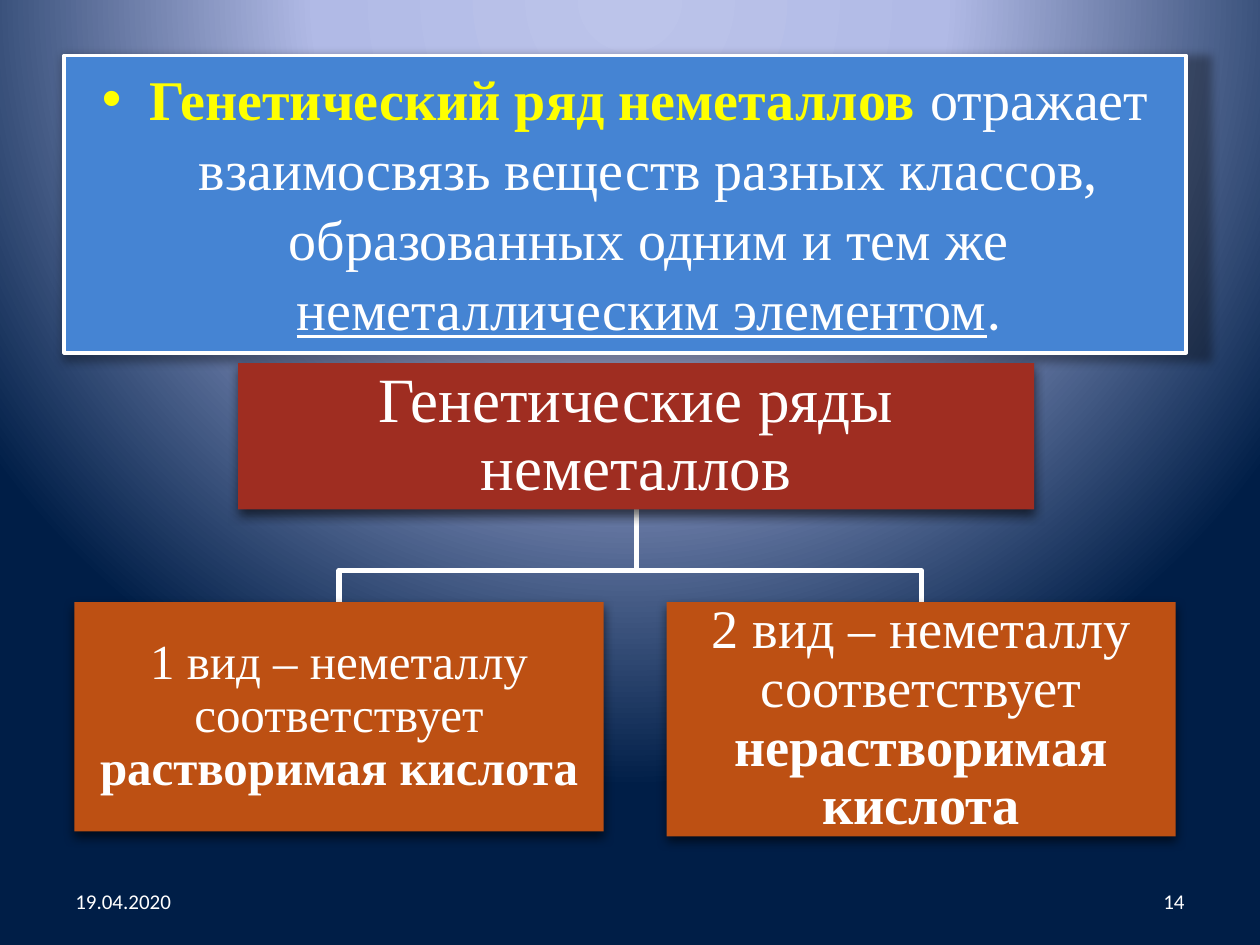
"""Builds a slide with a definition and a two-branch tree of non-metal genetic series."""
from dataclasses import dataclass

from lxml import etree
from pptx import Presentation
from pptx.dml.color import RGBColor
from pptx.enum.shapes import MSO_SHAPE
from pptx.enum.text import MSO_ANCHOR, PP_ALIGN
from pptx.oxml import parse_xml
from pptx.oxml.ns import qn
from pptx.util import Cm, Pt

RECTANGLE = MSO_SHAPE.RECTANGLE
TOP, MIDDLE = MSO_ANCHOR.TOP, MSO_ANCHOR.MIDDLE
LEFT, CENTER, RIGHT = PP_ALIGN.LEFT, PP_ALIGN.CENTER, PP_ALIGN.RIGHT
SERIF, SANS = "Times New Roman", "Calibri"
WHITE, YELLOW, BLUE, RED, ORANGE = "FFFFFF", "FFFF00", "4584D3", "9F2D21", "BD5013"
BACKGROUND_STOPS = [(0, "BCC4EA"), (40, "B1BAE6"), (100, "001E47")]
BEND_HEIGHT = 11.5


@dataclass
class Shadow:
    alpha: int
    blur: float
    distance: float
    scale: int = 100


@dataclass
class Span:
    text: str
    color: str = WHITE
    bold: bool = False
    underline: bool = False
    font: str = SERIF


@dataclass
class Node:
    left: float
    top: float
    width: float
    height: float
    fill: str
    size: float
    spans: list[Span]
    inset: float = 0.05

    @property
    def center(self) -> float:
        return self.left + self.width / 2


DEFINITION = [
    Span("Генетический ряд неметаллов ", YELLOW, bold=True),
    Span("отражает взаимосвязь веществ разных классов, образованных одним и тем же "),
    Span("неметаллическим элементом", underline=True),
    Span(".", font=SANS),
]
ROOT = Node(4.8, 7.32, 16.05, 2.95, RED, 36, [Span("Генетические ряды неметаллов")], 0.08)
BRANCHES = [
    Node(1.5, 12.14, 10.67, 4.62, ORANGE, 28,
         [Span("1 вид – неметаллу соответствует "), Span("растворимая кислота", bold=True)]),
    Node(13.44, 12.14, 10.26, 4.72, ORANGE, 31,
         [Span("2 вид – неметаллу соответствует "), Span("нерастворимая кислота", bold=True)]),
]
NODE_SHADOW = Shadow(60, 6, 3)


def rgb(color: str) -> RGBColor:
    return RGBColor.from_string(color)


def paint_background(page) -> None:
    stops = "".join(
        f'<a:gs pos="{place * 1000}"><a:srgbClr val="{color}"/></a:gs>'
        for place, color in BACKGROUND_STOPS
    )
    background = parse_xml(
        '<p:bg xmlns:p="http://schemas.openxmlformats.org/presentationml/2006/main"'
        ' xmlns:a="http://schemas.openxmlformats.org/drawingml/2006/main">'
        f'<p:bgPr><a:gradFill rotWithShape="1"><a:gsLst>{stops}</a:gsLst>'
        '<a:path path="circle"><a:fillToRect l="50000" t="-80000" r="50000" b="180000"/></a:path>'
        '</a:gradFill><a:effectLst/></p:bgPr></p:bg>'
    )
    page.shapes.element.getparent().insert(0, background)


def cast_shadow(box, shadow: Shadow) -> None:
    box.shadow.inherit = False
    effects = box.element.spPr.find(qn("a:effectLst"))
    outer = etree.SubElement(
        effects, qn("a:outerShdw"), blurRad=str(Pt(shadow.blur)), dist=str(Pt(shadow.distance)),
        dir="5400000", sx=str(shadow.scale * 1000), sy=str(shadow.scale * 1000),
        algn="tl", rotWithShape="0",
    )
    color = etree.SubElement(outer, qn("a:srgbClr"), val="000000")
    etree.SubElement(color, qn("a:alpha"), val=str(shadow.alpha * 1000))


def write(box, spans: list[Span], *, size: float, align=CENTER, anchor=MIDDLE,
          inset: float | None = None, spacing: float = 1.0):
    frame = box.text_frame
    frame.word_wrap = True
    frame.vertical_anchor = anchor
    if inset is not None:
        frame.margin_left = frame.margin_right = Cm(inset)
        frame.margin_top = frame.margin_bottom = Cm(inset)
    paragraph = frame.paragraphs[0]
    paragraph.alignment = align
    paragraph.line_spacing = spacing
    for span in spans:
        run = paragraph.add_run()
        run.text = span.text
        run.font.name = span.font
        run.font.size = Pt(size)
        run.font.bold = span.bold
        run.font.underline = span.underline
        run.font.color.rgb = rgb(span.color)
    return paragraph


def add_bullet(paragraph, indent: float) -> None:
    properties = paragraph._p.get_or_add_pPr()
    properties.set("marL", str(Cm(indent)))
    properties.set("indent", str(-Cm(indent)))
    etree.SubElement(properties, qn("a:buFont"), typeface="Arial")
    etree.SubElement(properties, qn("a:buChar"), char="•")


def add_box(page, left: float, top: float, width: float, height: float, fill: str, shadow: Shadow):
    box = page.shapes.add_shape(RECTANGLE, Cm(left), Cm(top), Cm(width), Cm(height))
    box.fill.solid()
    box.fill.fore_color.rgb = rgb(fill)
    box.line.fill.background()
    cast_shadow(box, shadow)
    return box


def add_definition(page) -> None:
    box = add_box(page, 1.3, 1.12, 22.61, 5.99, BLUE, Shadow(32, 5, 1, scale=102))
    box.line.color.rgb = rgb(WHITE)
    box.line.width = Pt(2.25)
    paragraph = write(box, DEFINITION, size=32, anchor=TOP, spacing=1.04)
    paragraph.space_before = Pt(6.4)
    add_bullet(paragraph, 0.95)


def add_branch_line(page, root: Node, branch: Node) -> None:
    start = root.top + root.height
    builder = page.shapes.build_freeform(Cm(root.center), Cm(start))
    corners = [(root.center, BEND_HEIGHT), (branch.center, BEND_HEIGHT), (branch.center, branch.top)]
    builder.add_line_segments([(Cm(x), Cm(y)) for x, y in corners], close=False)
    line = builder.convert_to_shape()
    line.fill.background()
    line.line.color.rgb = rgb(WHITE)
    line.line.width = Pt(3)
    line.shadow.inherit = False


def add_node(page, node: Node) -> None:
    box = add_box(page, node.left, node.top, node.width, node.height, node.fill, NODE_SHADOW)
    write(box, node.spans, size=node.size, inset=node.inset, spacing=0.9)


def add_footer(page, text: str, left: float, align) -> None:
    box = page.shapes.add_textbox(Cm(left), Cm(17.65), Cm(5.92), Cm(1.02))
    write(box, [Span(text, font=SANS)], size=12, align=align)


def main() -> None:
    deck = Presentation()
    deck.slide_width, deck.slide_height = Cm(25.4), Cm(19.05)
    page = deck.slides.add_slide(deck.slide_layouts.get_by_name("Blank"))
    paint_background(page)
    add_definition(page)
    add_footer(page, "19.04.2020", 1.27, LEFT)
    add_footer(page, "14", 18.21, RIGHT)
    for branch in reversed(BRANCHES):
        add_branch_line(page, ROOT, branch)
    for node in [ROOT, *BRANCHES]:
        add_node(page, node)
    deck.save("out.pptx")


if __name__ == "__main__":
    main()
